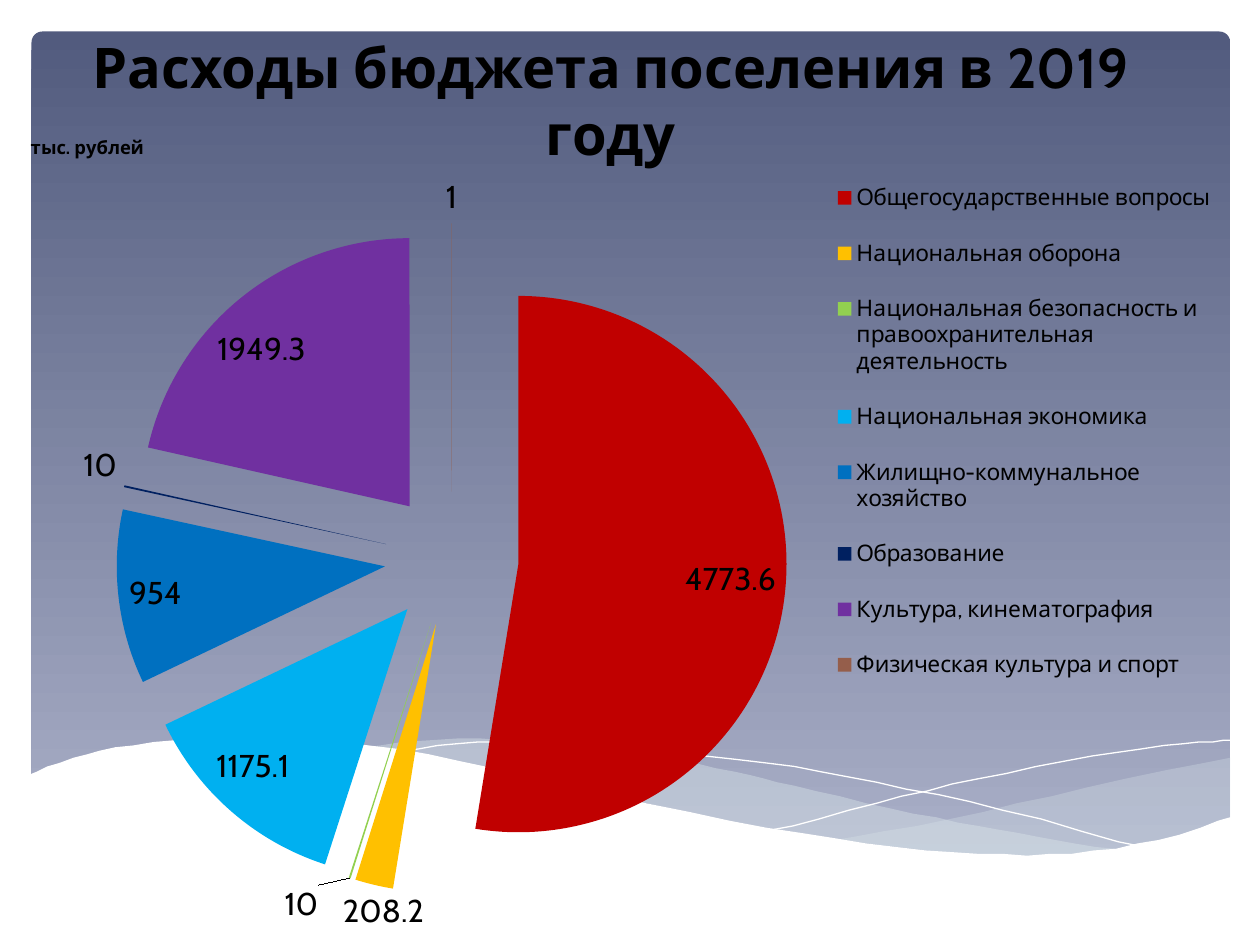
from lxml import etree
from pptx import Presentation
from pptx.chart.data import CategoryChartData
from pptx.dml.color import RGBColor
from pptx.enum.chart import XL_CHART_TYPE, XL_LABEL_POSITION, XL_LEGEND_POSITION
from pptx.enum.shapes import MSO_SHAPE
from pptx.enum.text import MSO_ANCHOR, PP_ALIGN
from pptx.oxml.ns import qn
from pptx.util import Pt

PIE = XL_CHART_TYPE.PIE_EXPLODED
FIT = XL_LABEL_POSITION.BEST_FIT
RIGHT = XL_LEGEND_POSITION.RIGHT
ROUND = MSO_SHAPE.ROUNDED_RECTANGLE
TOP = MSO_ANCHOR.TOP
MID = PP_ALIGN.CENTER

FONT = "Cabin"
COLORS = {"dark": "525B7E", "light": "AAB0C8", "pale": "DDE9EC",
          "white": "FFFFFF", "black": "000000"}
COSTS = [
    ("Общегосударственные вопросы", 4773.6, "C00000"),
    ("Национальная оборона", 208.2, "FFC000"),
    ("Национальная безопасность и правоохранительная деятельность", 10, "92D050"),
    ("Национальная экономика", 1175.1, "00B0F0"),
    ("Жилищно-коммунальное хозяйство", 954, "0070C0"),
    ("Образование", 10, "002060"),
    ("Культура, кинематография", 1949.3, "7030A0"),
    ("Физическая культура и спорт", 1, "955E4B"),
]

HILL = [
    [(703, 433), (621, 450), (543, 468), (477, 480)],
    [(477, 480), (538, 487), (594, 489.5), (647, 485), (685, 475), (703, 467)],
]
BAND = [
    [(207, 427), (261, 422), (317, 425), (371, 432), (420, 441), (454, 449),
     (509, 462), (559, 472), (603, 480), (644, 486)],
    [(644, 486), (589, 490), (539, 488), (479, 481), (408, 468), (324, 449),
     (276, 438), (207, 427)],
]
FALL = [[(223, 430), (261, 425), (312, 424), (368, 428), (438, 436),
         (501, 447), (573, 463), (654, 484.5)]]
RISE = [[(442, 474.5), (501, 459), (559, 445), (624, 432), (676, 425), (703, 423)]]
BASE = [
    [(703, 467), (662, 480), (612, 487.5), (560, 488), (495, 482), (417, 469),
     (322, 448), (245, 431), (180, 423), (127, 422), (76, 425.5), (42, 433),
     (16.5, 443)],
    [(16.5, 443), (16.5, 526.5)],
    [(16.5, 526.5), (703, 526.5)],
]


def rgb(code):
    return RGBColor.from_string(code)


def style(font, size, bold=False, color=COLORS["black"]):
    font.name, font.size, font.bold = FONT, Pt(size), bold
    font.color.rgb = rgb(color)


def write(frame, text, size, bold=False, align=None):
    para = frame.paragraphs[0]
    para.alignment = align
    run = para.add_run()
    run.text = text
    style(run.font, size, bold)


def smooth(knots, steps=4):
    ends = [knots[0], *knots, knots[-1]]
    path = [knots[0]]
    for a, b, c, d in zip(ends, ends[1:], ends[2:], ends[3:]):
        for step in range(1, steps + 1):
            t = step / steps
            path.append(tuple(
                (2 * q + (r - p) * t + (2 * p - 5 * q + 4 * r - s) * t ** 2
                 + (3 * q - p - 3 * r + s) * t ** 3) / 2
                for p, q, r, s in zip(a, b, c, d)))
    return path


def wave(slide, curves, fill=None, alpha=100, line=None):
    path = [spot for curve in curves for spot in smooth(curve)]
    pen = slide.shapes.build_freeform(*path[0], scale=Pt(1))
    pen.add_line_segments(path[1:], close=fill is not None)
    shape = pen.convert_to_shape()
    shape.shadow.inherit = False
    if fill:
        shape.fill.solid()
        shape.fill.fore_color.rgb = rgb(fill)
        tint = shape.fill.fore_color
        node = shape.element.spPr.find(qn("a:solidFill"))[0]
        if alpha < 100:
            etree.SubElement(node, qn("a:alpha"), val=str(alpha * 1000))
    else:
        shape.fill.background()
    if line:
        shape.line.color.rgb = rgb(line)
        shape.line.width = Pt(0)
    else:
        shape.line.fill.background()


def scene(slide, left, top, width, height):
    panel = slide.shapes.add_shape(ROUND, Pt(left), Pt(top), Pt(width), Pt(height))
    panel.adjustments[0] = 0.013
    panel.shadow.inherit = False
    panel.line.fill.background()
    panel.fill.gradient()
    panel.fill.gradient_angle = 270
    for stop, name in zip(panel.fill.gradient_stops, ("dark", "light")):
        stop.color.rgb = rgb(COLORS[name])
    wave(slide, HILL, COLORS["pale"], 29)
    wave(slide, BAND, COLORS["pale"], 40)
    wave(slide, FALL, line=COLORS["white"])
    wave(slide, RISE, line=COLORS["white"])
    wave(slide, BASE, COLORS["white"])


def heading(slide, left, top, width, height):
    title = slide.shapes.title
    title.left, title.top = Pt(left), Pt(top)
    title.width, title.height = Pt(width), Pt(height)
    frame = title.text_frame
    frame.word_wrap = True
    frame.vertical_anchor = TOP
    write(frame, "Расходы бюджета поселения в 2019 году", 32, True, MID)
    title.element.getparent().append(title.element)


def place(node, **box):
    old = node.find(qn("c:layout"))
    if old is not None:
        node.remove(old)
    outer = etree.Element(qn("c:layout"))
    inner = etree.SubElement(outer, qn("c:manualLayout"))
    if "inner" in box:
        etree.SubElement(inner, qn("c:layoutTarget"), val=box.pop("inner"))
    for key in ("x", "y"):
        etree.SubElement(inner, qn(f"c:{key}Mode"), val="edge")
    for key, val in box.items():
        etree.SubElement(inner, qn(f"c:{key}"), val=str(val))
    over = node.find(qn("c:overlay"))
    if over is None:
        node.insert(0, outer)
    else:
        over.addprevious(outer)


def budget(slide, left, top, width, height):
    data = CategoryChartData()
    data.categories = [name for name, _, _ in COSTS]
    data.add_series("Series 1", [cost for _, cost, _ in COSTS])
    chart = slide.shapes.add_chart(
        PIE, Pt(left), Pt(top), Pt(width), Pt(height), data).chart
    style(chart.font, 18)
    chart.has_title = True
    write(chart.chart_title.text_frame, "тыс. рублей", 10.5, True)
    chart.chart_title.include_in_layout = False
    chart.has_legend = True
    chart.legend.position = RIGHT
    chart.legend.include_in_layout = False
    style(chart.legend.font, 13)

    plot = chart.plots[0]
    plot.vary_by_categories = True
    plot.has_data_labels = True
    tags = plot.data_labels
    tags.show_value = True
    tags.show_percentage = False
    tags.number_format = "General"
    tags.number_format_is_linked = False
    tags.position = FIT
    style(tags.font, 18)
    row = plot.series[0]
    for num, (_, _, color) in enumerate(COSTS):
        fill = row.points[num].format.fill
        fill.solid()
        fill.fore_color.rgb = rgb(color)
    burst = row._element.find(qn("c:explosion"))
    if burst is None:
        burst = etree.Element(qn("c:explosion"))
        row._element.find(qn("c:dPt")).addprevious(burst)
    burst.set("val", "25")

    root = chart.element
    place(root.find(".//" + qn("c:title")), x=0.01, y=0.04)
    place(root.find(".//" + qn("c:plotArea")),
          inner="inner", x=0.08, y=0.15, w=0.55, h=0.79)
    place(root.find(".//" + qn("c:legend")), x=0.66, y=0.07, w=0.32, h=0.65)


def main():
    deck = Presentation()
    deck.slide_width, deck.slide_height = Pt(720), Pt(540)
    slide = deck.slides.add_slide(deck.slide_layouts[5])
    scene(slide, 18, 18, 685, 475)
    heading(slide, 14.5, 15, 669, 46)
    budget(slide, 8.5, 55, 703, 485)
    deck.save("out.pptx")


if __name__ == "__main__":
    main()
